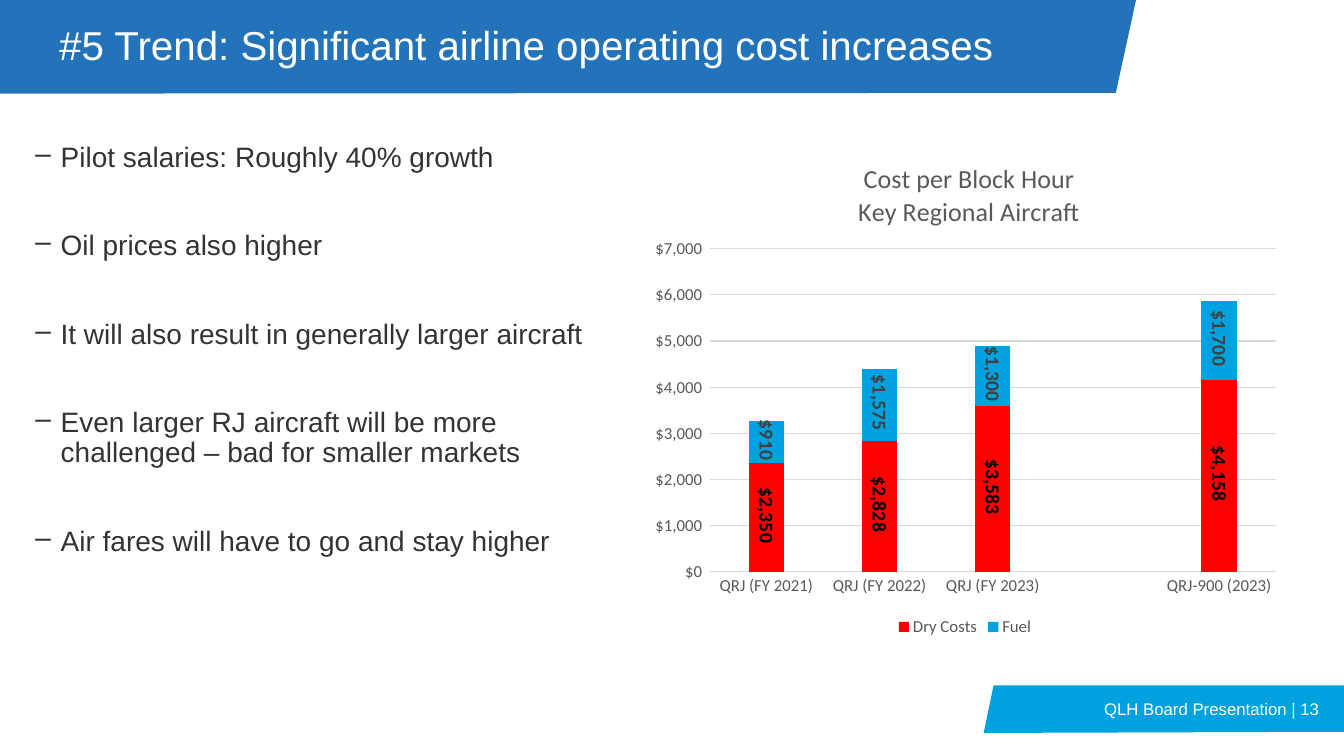
"""Build the airline operating cost slide with its stacked cost chart."""
from dataclasses import dataclass

from lxml.etree import SubElement
from pptx import Presentation
from pptx.chart.data import CategoryChartData
from pptx.dml.color import RGBColor
from pptx.enum.chart import XL_CHART_TYPE, XL_LEGEND_POSITION, XL_TICK_MARK
from pptx.enum.text import MSO_ANCHOR, PP_ALIGN
from pptx.oxml import parse_xml
from pptx.oxml.ns import nsdecls, qn
from pptx.util import Cm, Pt

COLOURS = {
    "banner": "2273BA", "accent": "00A1DF", "red": "FF0000", "white": "FFFFFF",
    "body": "333333", "axis": "595959", "grid": "D9D9D9",
    "black": "000000", "fuel_label": "404040",
}
DOLLARS = r'"$"#,##0_);\("$"#,##0\)'


@dataclass
class Band:
    colour: str
    points: list[tuple[float, float]]


@dataclass
class TextBlock:
    left: float
    top: float
    width: float
    height: float
    lines: list[str]
    size: float
    colour: str
    anchor: MSO_ANCHOR = MSO_ANCHOR.MIDDLE
    align: PP_ALIGN = PP_ALIGN.LEFT
    line_spacing: float = 0.9
    gap: float = 0
    dashed: bool = False


@dataclass
class CostSeries:
    name: str
    values: list[int | None]
    colour: str
    label_colour: str


BANDS = [
    Band("banner", [(0, 0), (28.63, 0), (28.12, 2.34), (0, 2.36)]),
    Band("accent", [(25.04, 17.27), (33.87, 17.27), (33.87, 18.44), (24.79, 18.47)]),
]
TEXTS = [
    TextBlock(1.24, 0.03, 25.1, 2.34,
              ["#5 Trend: Significant airline operating cost increases"], 28.8, "white"),
    TextBlock(0.64, 3.48, 15.01, 12.67, [
        "Pilot salaries: Roughly 40% growth",
        "Oil prices also higher",
        "It will also result in generally larger aircraft",
        "Even larger RJ aircraft will be more challenged – bad for smaller markets",
        "Air fares will have to go and stay higher",
    ], 20, "body", anchor=MSO_ANCHOR.TOP, gap=41.6, dashed=True),
    TextBlock(25.93, 17.27, 7.57, 1.19, ["QLH Board Presentation | 13"], 12, "white",
              align=PP_ALIGN.RIGHT, line_spacing=1),
]
AIRCRAFT = ["QRJ (FY 2021)", "QRJ (FY 2022)", "QRJ (FY 2023)", "", "QRJ-900 (2023)"]
COSTS = [
    CostSeries("Dry Costs", [2350, 2828, 3583, None, 4158], "red", "black"),
    CostSeries("Fuel", [910, 1575, 1300, None, 1700], "accent", "fuel_label"),
]


def rgb(name: str) -> RGBColor:
    """Return a named colour."""
    return RGBColor.from_string(COLOURS[name])


def style_font(font, size: float, colour: str, family: str, bold: bool = False) -> None:
    """Set the size, colour, family and weight of a font."""
    font.size, font.name, font.bold = Pt(size), family, bold
    font.color.rgb = rgb(colour)


def draw_band(page, band: Band) -> None:
    """Draw one slanted band."""
    corners = [(Cm(x), Cm(y)) for x, y in band.points]
    builder = page.shapes.build_freeform(*corners[0])
    builder.add_line_segments(corners[1:], close=True)
    shape = builder.convert_to_shape()
    shape.shadow.inherit = False
    shape.fill.solid()
    shape.fill.fore_color.rgb = rgb(band.colour)
    shape.line.fill.background()


def draw_text(page, block: TextBlock) -> None:
    """Draw one text box, with dash bullets if asked for."""
    box = page.shapes.add_textbox(
        Cm(block.left), Cm(block.top), Cm(block.width), Cm(block.height))
    frame = box.text_frame
    frame.word_wrap = True
    frame.vertical_anchor = block.anchor
    frame.text = "\n".join(block.lines)
    for index, para in enumerate(frame.paragraphs):
        para.alignment = block.align
        para.line_spacing = block.line_spacing
        para.space_before = Pt(block.gap if index else 0)
        for span in para.runs:
            style_font(span.font, block.size, block.colour, "Arial")
        if block.dashed:
            properties = para._p.get_or_add_pPr()
            properties.set("marL", str(Cm(0.64)))
            properties.set("indent", str(-Cm(0.64)))
            SubElement(properties, qn("a:buChar")).set("char", "–")


def manual_layout(**settings: str | float):
    """Return a manual chart layout element."""
    children = "".join(f'<c:{key} val="{value}"/>' for key, value in settings.items())
    return parse_xml(f'<c:layout {nsdecls("c")}><c:manualLayout>{children}'
                     '</c:manualLayout></c:layout>')


def place(element, layout) -> None:
    """Give a chart part its layout, replacing any present one."""
    for present in element.findall(qn("c:layout")):
        element.remove(present)
    text = element.find(qn("c:tx"))
    element.insert(0 if text is None else element.index(text) + 1, layout)


def style_series(series, cost: CostSeries) -> None:
    """Colour one series and turn its value labels upright."""
    series.format.fill.solid()
    series.format.fill.fore_color.rgb = rgb(cost.colour)
    labels = series.data_labels
    labels.show_value = True
    labels.number_format, labels.number_format_is_linked = DOLLARS, False
    style_font(labels.font, 14, cost.label_colour, "Calibri", bold=True)
    body = labels._element.find(qn("c:txPr")).find(qn("a:bodyPr"))
    body.set("rot", "5400000")
    body.set("vert", "horz")


def draw_chart(page) -> None:
    """Draw the stacked cost chart."""
    data = CategoryChartData(number_format=DOLLARS)
    data.categories = AIRCRAFT
    for cost in COSTS:
        data.add_series(cost.name, cost.values)
    chart = page.shapes.add_chart(XL_CHART_TYPE.COLUMN_STACKED, Cm(16.18), Cm(3.48),
                                  Cm(16.28), Cm(12.67), data).chart
    style_font(chart.font, 10, "black", "Calibri")
    title = chart.chart_title
    title.text_frame.text = "Cost per Block Hour\nKey Regional Aircraft"
    for para in title.text_frame.paragraphs:
        style_font(para.runs[0].font, 18.6, "axis", "Calibri")
    title.include_in_layout = False
    place(title._element, manual_layout(xMode="edge", yMode="edge", x=0.33, y=0.04))

    plot = chart.plots[0]
    plot.gap_width, plot.overlap, plot.vary_by_categories = 219, 100, False
    for series, cost in zip(plot.series, COSTS):
        style_series(series, cost)
    place(chart._chartSpace.chart.plotArea, manual_layout(
        layoutTarget="inner", xMode="edge", yMode="edge", x=0.105, y=0.22, w=0.876, h=0.643))

    for axis in (chart.category_axis, chart.value_axis):
        axis.major_tick_mark = axis.minor_tick_mark = XL_TICK_MARK.NONE
        style_font(axis.tick_labels.font, 12, "axis", "Calibri")
    costs = chart.value_axis
    costs.minimum_scale, costs.maximum_scale, costs.major_unit = 0, 7000, 1000
    costs.tick_labels.number_format = DOLLARS
    costs.tick_labels.number_format_is_linked = False
    costs.format.line.fill.background()
    for line in (chart.category_axis.format.line, costs.major_gridlines.format.line):
        line.color.rgb, line.width = rgb("grid"), Pt(0.75)

    chart.has_legend = True
    chart.legend.position = XL_LEGEND_POSITION.BOTTOM
    chart.legend.include_in_layout = False
    style_font(chart.legend.font, 12, "axis", "Calibri")


def main() -> None:
    """Build and save the deck."""
    deck = Presentation()
    deck.slide_width, deck.slide_height = Cm(33.87), Cm(19.05)
    page = deck.slides.add_slide(deck.slide_layouts[6])
    for band in BANDS:
        draw_band(page, band)
    draw_chart(page)
    for block in TEXTS:
        draw_text(page, block)
    deck.save("out.pptx")


if __name__ == "__main__":
    main()
